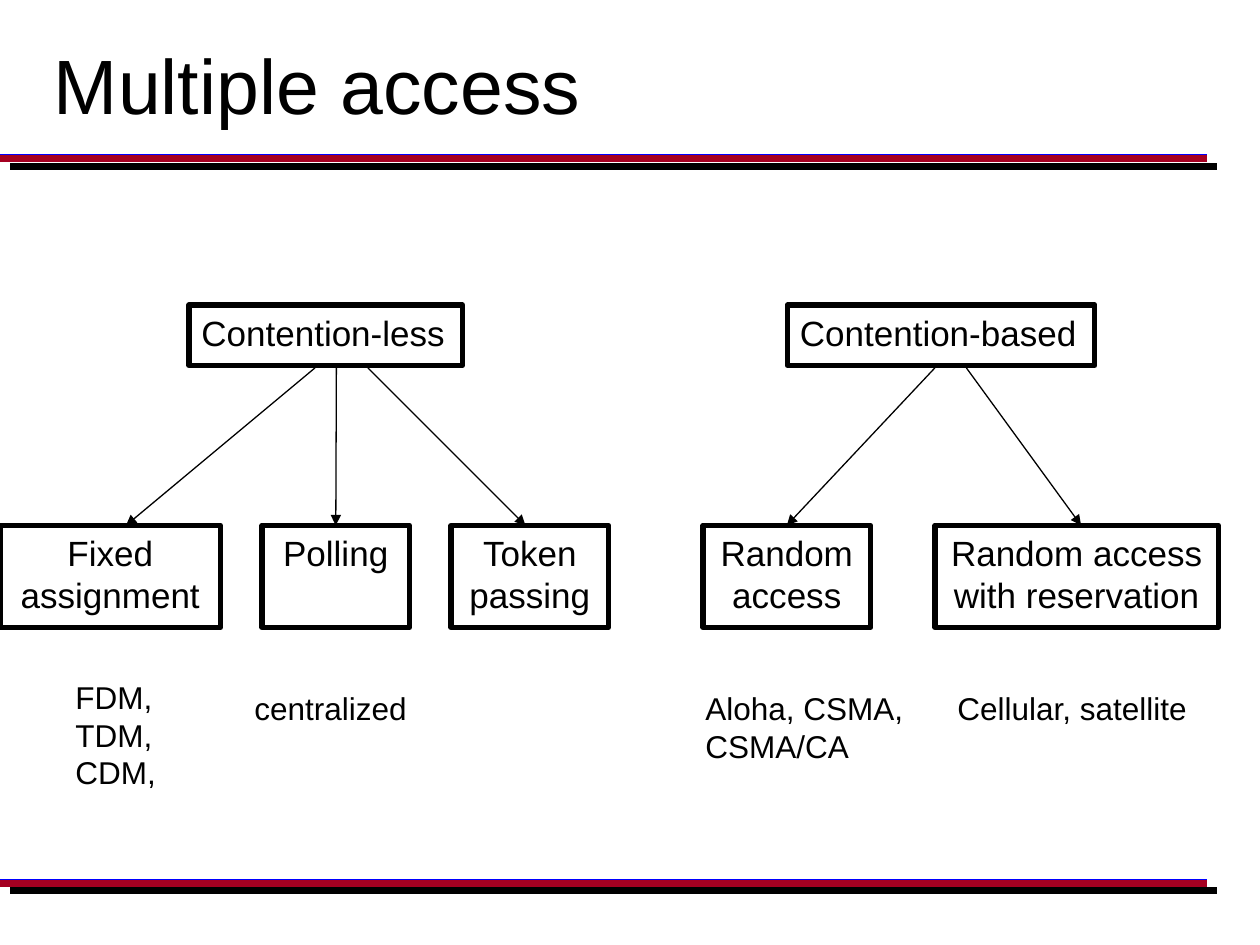
from lxml import etree
from pptx import Presentation
from pptx import util as u
from pptx.dml.color import RGBColor
from pptx.enum import shapes, text
from pptx.oxml.ns import qn

BLACK = RGBColor(0, 0, 0)
BLUE = RGBColor(0, 0, 0xFF)
RED = RGBColor(0xA5, 0, 0x21)
FONT = "Arial"
LEFT, MID = text.PP_ALIGN.LEFT, text.PP_ALIGN.CENTER
TOP, LOW = 2.92, 4.17


def write(shape, lines, size, align=LEFT, wrap=False, anchor=text.MSO_ANCHOR.TOP):
    """Fill a shape with one paragraph per line."""
    frame = shape.text_frame
    frame.word_wrap = wrap
    frame.vertical_anchor = anchor
    for i, line in enumerate(lines):
        para = frame.add_paragraph() if i else frame.paragraphs[0]
        para.alignment = align
        run = para.add_run()
        run.text = line
        run.font.size = u.Pt(size)
        run.font.name = FONT
        run.font.color.rgb = BLACK


def label(slide, x, y, w, h, lines, size=18, **style):
    """Add a plain text box."""
    area = map(u.Inches, (x, y, w, h))
    write(slide.shapes.add_textbox(*area), lines, size, **style)


def box(slide, x, y, w, h, words, align=MID, wrap=True):
    """Add an outlined box with text and return it."""
    area = map(u.Inches, (x, y, w, h))
    shape = slide.shapes.add_shape(shapes.MSO_SHAPE.RECTANGLE, *area)
    shape.shadow.inherit = False
    shape.fill.background()
    shape.line.color.rgb = BLACK
    shape.line.width = u.Pt(3)
    write(shape, [words], 20, align, wrap)
    return shape


def line(slide, x1, y1, x2, y2, color, width):
    """Add a straight line without a theme shadow and return it."""
    ends = map(u.Inches, (x1, y1, x2, y2))
    link = slide.shapes.add_connector(shapes.MSO_CONNECTOR.STRAIGHT, *ends)
    link.line.color.rgb = color
    link.line.width = u.Pt(width)
    etree.SubElement(link._element.spPr, qn("a:effectLst"))
    return link


def shade(link):
    """Give a line a hard black shadow down to the right."""
    effects = link._element.spPr.find(qn("a:effectLst"))
    cast = etree.SubElement(effects, qn("a:outerShdw"), blurRad="0",
                            dist=str(u.Pt(7.8)), dir=str(40 * 60000),
                            algn="ctr", rotWithShape="0")
    etree.SubElement(cast, qn("a:srgbClr"), val=str(BLACK))


def arrow(slide, x1, x2, goal=None):
    """Add an arrow from the upper row to the lower, joined to a goal box."""
    link = line(slide, x1, TOP, x2, LOW, BLACK, 0.75)
    if goal is not None:
        link.end_connect(goal, 0)
    etree.SubElement(link.line._get_or_add_ln(), qn("a:tailEnd"), type="triangle")


def main():
    """Build the slide and save it."""
    deck = Presentation()
    deck.slide_width, deck.slide_height = u.Inches(10), u.Inches(7.5)
    slide = deck.slides.add_slide(deck.slide_layouts[6])

    for y in (1.25, 7):
        shade(line(slide, 0, y, 9.58, y, BLUE, 4))
        line(slide, 0, y + 0.01, 9.58, y + 0.01, RED, 4)
    label(slide, 0.33, 0, 9.17, 1.33, ["Multiple access"], 44,
          wrap=True, anchor=text.MSO_ANCHOR.MIDDLE)

    for x, w, words in ((1.5, 2.17, "Contention-less"),
                        (6.25, 2.44, "Contention-based")):
        box(slide, x, 2.42, w, 0.48, words, LEFT, False)

    kinds = {words: box(slide, x, LOW, w, 0.81, words) for x, w, words in (
        (0, 1.75, "Fixed assignment"),
        (2.08, 1.17, "Polling"),
        (3.58, 1.25, "Token passing"),
        (5.58, 1.33, "Random access"),
        (7.42, 2.25, "Random access with reservation"))}

    arrow(slide, 2.5, 1)
    arrow(slide, 2.67, 2.67, kinds["Polling"])
    arrow(slide, 2.92, 4.17)
    arrow(slide, 7.42, 6.25, kinds["Random access"])
    arrow(slide, 7.67, 8.58)

    label(slide, 0.5, 5.33, 0.84, 1, ["FDM,", "TDM,", "CDM,"])
    label(slide, 1.92, 5.42, 1.41, 0.4, ["centralized"])
    label(slide, 5.5, 5.42, 1.77, 0.7, ["Aloha, CSMA,", "CSMA/CA"])
    label(slide, 7.5, 5.42, 2.03, 0.4, ["Cellular, satellite"])
    deck.save("out.pptx")


if __name__ == "__main__":
    main()
